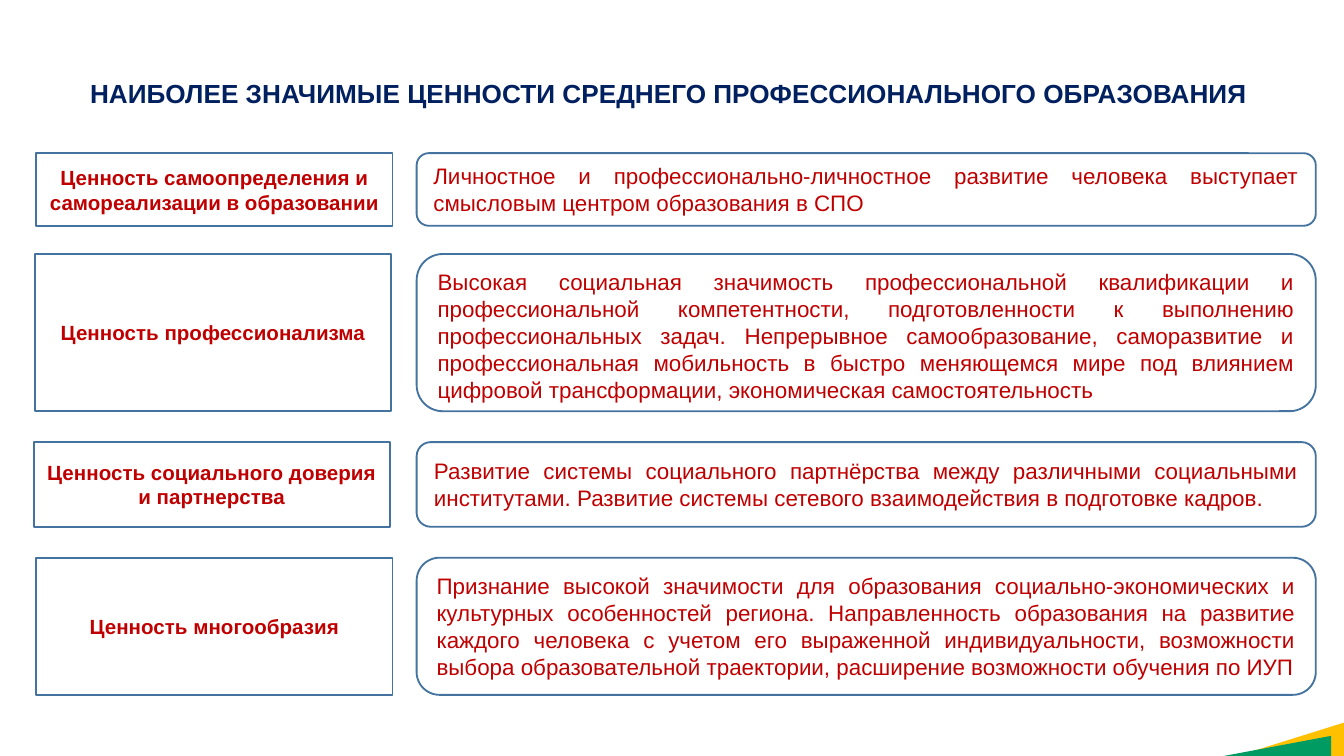
from pptx import Presentation
from pptx.dml.color import RGBColor as Rgb
from pptx.enum.shapes import MSO_SHAPE as Shape
from pptx.enum.text import MSO_ANCHOR as Anchor, PP_ALIGN as Align
from pptx.util import Inches, Pt

COLORS = {
    "paper": "FFFFFF", "edge": "43739E", "title": "002060",
    "text": "C00000", "gold": "FFC000", "green": "009B62",
}
FONT = "Arial"
TITLE = "НАИБОЛЕЕ ЗНАЧИМЫЕ ЦЕННОСТИ СРЕДНЕГО ПРОФЕССИОНАЛЬНОГО ОБРАЗОВАНИЯ"
ROWS = [
    (0.27, 1.14, 0.54, Anchor.MIDDLE,
     "Ценность самоопределения и самореализации в образовании",
     "Личностное и профессионально-личностное развитие человека выступает "
     "смысловым центром образования в СПО"),
    (0.26, 1.89, 1.17, Anchor.TOP,
     "Ценность профессионализма",
     "Высокая социальная значимость профессиональной квалификации и "
     "профессиональной компетентности, подготовленности к выполнению "
     "профессиональных задач. Непрерывное самообразование, саморазвитие и "
     "профессиональная мобильность в быстро меняющемся мире под влиянием "
     "цифровой трансформации, экономическая самостоятельность"),
    (0.25, 3.29, 0.63, Anchor.MIDDLE,
     "Ценность социального доверия и партнерства",
     "Развитие системы социального партнёрства между различными социальными "
     "институтами. Развитие системы сетевого взаимодействия в подготовке кадров."),
    (0.27, 4.15, 1.02, Anchor.MIDDLE,
     "Ценность многообразия",
     "Признание высокой значимости для образования социально-экономических и "
     "культурных особенностей региона. Направленность образования на развитие "
     "каждого человека с учетом его выраженной индивидуальности, возможности "
     "выбора образовательной траектории, расширение возможности обучения по ИУП"),
]
CORNERS = [
    ((9.46, 5.09, 0.26, 0.83), "gold"),
    ((9.43, 5.15, 0.15, 0.8), "green"),
]
LABEL_W = 2.65
PANEL_X, PANEL_W = 3.1, 6.69


def color(name):
    return Rgb.from_string(COLORS[name])


def add_shape(slide, kind, area, fill):
    shape = slide.shapes.add_shape(kind, *map(Inches, area))
    shape.shadow.inherit = False
    shape.fill.solid()
    shape.fill.fore_color.rgb = color(fill)
    shape.line.fill.background()
    return shape


def write(shape, text, size, tone, align, bold, anchor):
    frame = shape.text_frame
    frame.word_wrap = True
    frame.vertical_anchor = anchor
    para = frame.paragraphs[0]
    para.text = text
    para.alignment = align
    font = para.font
    font.name, font.size, font.bold = FONT, Pt(size), bold
    font.color.rgb = color(tone)


def add_box(slide, area, text, size, align, bold, anchor, square=False):
    box = add_shape(slide, Shape.ROUNDED_RECTANGLE, area, "paper")
    if square:
        box.adjustments[0] = 0
    box.line.color.rgb = color("edge")
    box.line.width = Pt(1)
    write(box, text, size, "text", align, bold, anchor)


def main():
    deck = Presentation()
    deck.slide_width = Inches(10)
    deck.slide_height = deck.slide_width * 9 // 16
    slide = deck.slides.add_slide(deck.slide_layouts[6])

    for area, fill in CORNERS:
        add_shape(slide, Shape.RIGHT_TRIANGLE, area, fill).rotation = 270

    head = slide.shapes.add_textbox(*map(Inches, (0.31, 0.53, 9.33, 0.34)))
    write(head, TITLE, 14, "title", Align.CENTER, True, Anchor.TOP)

    for left, top, height, anchor, label, text in ROWS:
        add_box(slide, (PANEL_X, top, PANEL_W, height), text,
                12, Align.JUSTIFY, False, anchor)
        add_box(slide, (left, top, LABEL_W, height), label,
                11, Align.CENTER, True, Anchor.MIDDLE, square=True)

    deck.save("out.pptx")


if __name__ == "__main__":
    main()
